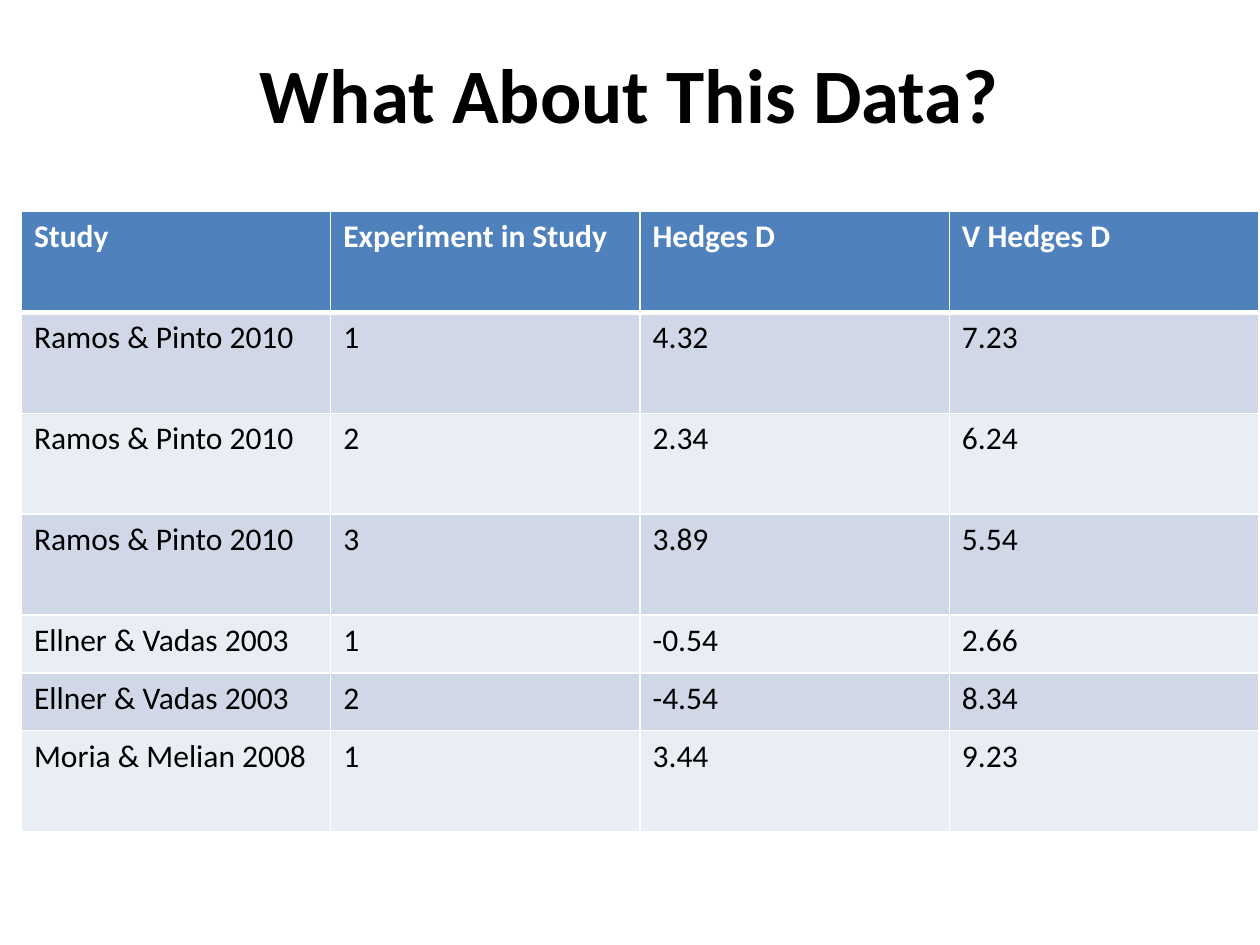
from pptx import Presentation
from pptx.dml.color import RGBColor
from pptx.enum.text import MSO_ANCHOR, PP_ALIGN
from pptx.util import Inches, Pt
from lxml.etree import SubElement
from pptx.oxml.ns import qn

# Content
TITLE = "What About This Data?"
ROWS = [
    ("Study", "Experiment in Study", "Hedges D", "V Hedges D"),
    ("Ramos & Pinto 2010", "1", "4.32", "7.23"),
    ("Ramos & Pinto 2010", "2", "2.34", "6.24"),
    ("Ramos & Pinto 2010", "3", "3.89", "5.54"),
    ("Ellner & Vadas 2003", "1", "-0.54", "2.66"),
    ("Ellner & Vadas 2003", "2", "-4.54", "8.34"),
    ("Moria & Melian 2008", "1", "3.44", "9.23"),
]
HEIGHTS = [0.8, 0.8, 0.8, 0.8, 0.46, 0.46, 0.8]
WIDTH = 9.82

FONT = "Calibri"
BLACK = RGBColor(0x00, 0x00, 0x00)
WHITE = RGBColor(0xFF, 0xFF, 0xFF)
BLUE = RGBColor(0x4F, 0x81, 0xBD)
BANDS = [RGBColor(0xE9, 0xED, 0xF4), RGBColor(0xD0, 0xD8, 0xE8)]


def style(para, size, color, bold):
    font = para.runs[0].font
    font.name, font.size, font.bold = FONT, Pt(size), bold
    font.color.rgb = color


def add_border(cell, side, width):
    props = cell._tc.get_or_add_tcPr()
    line = SubElement(props, qn(f"a:ln{side}"), w=str(Pt(width)))
    fill = SubElement(line, qn("a:solidFill"))
    SubElement(fill, qn("a:srgbClr"), val=str(WHITE))


deck = Presentation()
deck.slide_width, deck.slide_height = Inches(10), Inches(7.5)
slide = deck.slides.add_slide(deck.slide_layouts[6])

# Title
box = slide.shapes.add_textbox(Inches(0), Inches(0.11), Inches(10), Inches(1.25))
frame = box.text_frame
frame.word_wrap = True
frame.vertical_anchor = MSO_ANCHOR.MIDDLE
frame.text = TITLE
frame.paragraphs[0].alignment = PP_ALIGN.CENTER
style(frame.paragraphs[0], 44, BLACK, True)

# Table of studies
table = slide.shapes.add_table(
    len(ROWS), len(ROWS[0]), Inches(0.17), Inches(1.68),
    Inches(WIDTH), Inches(sum(HEIGHTS))).table
for col in table.columns:
    col.width = Inches(WIDTH / len(ROWS[0]))

for r, (row, height) in enumerate(zip(ROWS, HEIGHTS)):
    table.rows[r].height = Inches(height)
    head = r == 0
    for c, text in enumerate(row):
        cell = table.cell(r, c)
        cell.text = text
        style(cell.text_frame.paragraphs[0], 18, WHITE if head else BLACK, head)
        # The rule under the header is thicker than the others
        for side in "LRTB":
            thick = (r, side) in ((0, "B"), (1, "T"))
            add_border(cell, side, 3 if thick else 1)
        cell.fill.solid()
        cell.fill.fore_color.rgb = BLUE if head else BANDS[r % 2]

deck.save("out.pptx")
